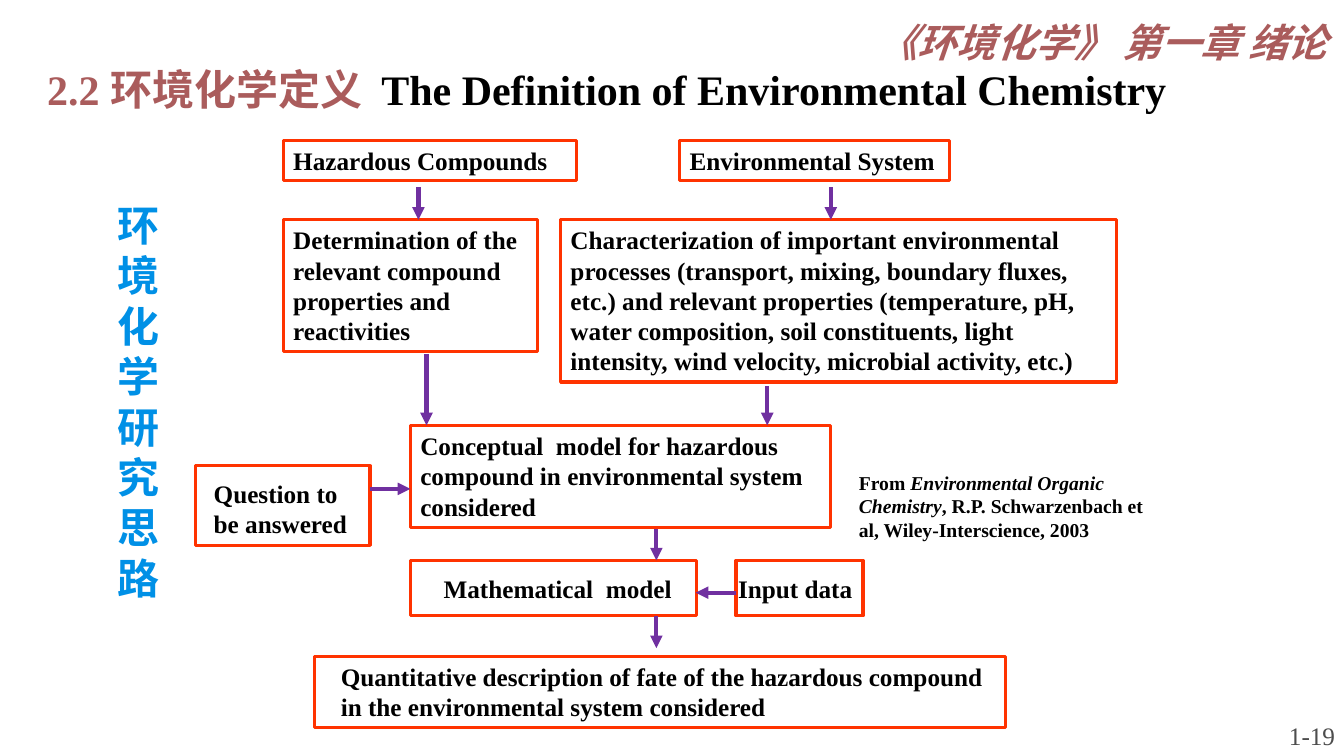
from dataclasses import dataclass

from lxml.etree import SubElement
from pptx import Presentation
from pptx.dml.color import RGBColor as Rgb
from pptx.enum.shapes import MSO_CONNECTOR as Link, MSO_SHAPE as Form
from pptx.enum.text import MSO_ANCHOR as Anchor, PP_ALIGN as Align
from pptx.oxml.ns import qn
from pptx.util import Inches, Pt

CELL = 0.1
SERIF, HAN, KANJI = "Times New Roman", "Noto Sans CJK SC", "Noto Sans CJK JP"
INK, RED, PURPLE, ROSE, BLUE, GRAY = (
    "000000", "FF3300", "7030A0", "AA5C5C", "0090E6", "4D4D4D")


@dataclass
class Run:
    text: str
    color: str = INK
    italic: bool = False


@dataclass
class Label:
    col: float
    row: float
    cols: float
    rows: float
    runs: list[Run]
    size: int = 18
    face: str = SERIF
    han: str = HAN
    bold: bool = True
    align: Align = Align.LEFT
    anchor: Anchor = Anchor.TOP
    lines: float = 1.0
    hang: float = 0
    left: float = 1
    top: float = 0.5
    frame: bool = False


@dataclass
class Arrow:
    col: float
    row: float
    to_col: float
    to_row: float


def node(col: float, row: float, cols: float, rows: float, text: str,
         left: float = 1, top: float = 0.5) -> Label:
    """Describe a framed step of the flow chart."""
    return Label(col, row, cols, rows, [Run(text)], left=left, top=top, frame=True)


NODES = [
    node(28.1, 13.9, 29.1, 4, "Hazardous Compounds"),
    node(67.4, 13.9, 26.8, 4, "Environmental System"),
    node(28.1, 21.8, 25.2, 13.1,
         "Determination of the relevant compound properties and reactivities"),
    node(55.6, 21.8, 55.1, 16.1,
         "Characterization of important environmental processes (transport, "
         "mixing, boundary fluxes, etc.) and relevant properties (temperature, "
         "pH, water composition, soil constituents, light intensity, wind "
         "velocity, microbial activity, etc.)"),
    node(40.7, 42.2, 41.7, 10.1,
         "Conceptual  model for hazardous compound in environmental system considered"),
    node(19.4, 46.2, 17.3, 7.9, "Question to be answered", 1.8, 1.2),
    node(40.7, 55.6, 28.4, 5.5, "Mathematical  model", 3.3, 1.3),
    node(73, 55.6, 12.6, 5.5, "Input data", 0.2, 1.3),
    node(31.2, 65.1, 68.5, 7.1,
         "Quantitative description of fate of the hazardous compound in the "
         "environmental system considered", 2.6),
]

ARROWS = [
    Arrow(41.5, 18.6, 41.5, 21.8),
    Arrow(82.4, 18.6, 82.4, 21.8),
    Arrow(42.3, 35.1, 42.3, 42.2),
    Arrow(76.1, 38.3, 76.1, 42.2),
    Arrow(36.7, 48.5, 40.7, 48.5),
    Arrow(65.1, 52.5, 65.1, 55.6),
    Arrow(73, 58.8, 69, 58.8),
    Arrow(65.1, 61.1, 65.1, 64.3),
]

NOTES = [
    Label(112.5, 69.8, 20.9, 5.2, [Run("1-19", GRAY)], bold=False,
          align=Align.RIGHT, anchor=Anchor.BOTTOM),
    Label(84.2, 46.2, 32.5, 8.1, [
        Run("From "), Run("Environmental Organic Chemistry", italic=True),
        Run(", R.P. Schwarzenbach et al, Wiley-Interscience, 2003")], 14),
    Label(10.7, 19.3, 7.9, 41.4, [Run("环境化学研究思路", BLUE)], 30, HAN),
    Label(75.1, 1.3, 57.5, 5.7, [Run("《环境化学》 第一章 绪论", ROSE, True)],
          28, KANJI, KANJI, align=Align.RIGHT),
    Label(3.7, 1.3, 122.1, 12.5, [
        Run("2.2 环境化学定义  ", ROSE),
        Run("The Definition of Environmental Chemistry")],
        30, anchor=Anchor.MIDDLE, lines=1.5, hang=5),
]


def grid(*cells: float) -> list[Inches]:
    """Turn counts of grid cells into lengths."""
    return [Inches(cell * CELL) for cell in cells]


def tint(code: str) -> Rgb:
    """Turn a hex string into a colour."""
    return Rgb.from_string(code)


def style(item: object, form: dict) -> None:
    """Set each format value on an object."""
    for name, value in form.items():
        setattr(item, name, value)


def write(label: Label, shapes) -> None:
    """Draw a label, framed or bare, with its runs."""
    place = grid(label.col, label.row, label.cols, label.rows)
    if label.frame:
        box = shapes.add_shape(Form.RECTANGLE, *place)
        box.shadow.inherit = False
        box.fill.background()
        box.line.color.rgb = tint(RED)
        box.line.width = Pt(2.25)
    else:
        box = shapes.add_textbox(*place)
    left, top, right, base = grid(label.left, label.top, min(label.left, 1), 0.5)
    style(box.text_frame, {
        "word_wrap": True, "vertical_anchor": label.anchor, "margin_left": left,
        "margin_top": top, "margin_right": right, "margin_bottom": base})
    para = box.text_frame.paragraphs[0]
    style(para, {"alignment": label.align, "line_spacing": label.lines})
    if label.hang:
        hang = grid(label.hang)[0]
        props = para._p.get_or_add_pPr()
        props.set("marL", str(hang))
        props.set("indent", str(-hang))
    for part in label.runs:
        run = para.add_run()
        run.text = part.text
        style(run.font, {"name": label.face, "size": Pt(label.size),
                         "bold": label.bold, "italic": part.italic})
        run.font.color.rgb = tint(part.color)
        SubElement(run._r.get_or_add_rPr(), qn("a:ea"), typeface=label.han)


def point(arrow: Arrow, shapes) -> None:
    """Draw an arrow between two grid points."""
    ends = grid(arrow.col, arrow.row, arrow.to_col, arrow.to_row)
    link = shapes.add_connector(Link.STRAIGHT, *ends)
    link.line.color.rgb = tint(PURPLE)
    link.line.width = Pt(3)
    SubElement(link.line._get_or_add_ln(), qn("a:tailEnd"), type="triangle")
    SubElement(link._element.spPr, qn("a:effectLst"))


def main() -> None:
    """Build the slide and save it."""
    deck = Presentation()
    style(deck, {"slide_width": Inches(13.33), "slide_height": Inches(7.5)})
    shapes = deck.slides.add_slide(deck.slide_layouts[6]).shapes
    for label in NODES:
        write(label, shapes)
    for arrow in ARROWS:
        point(arrow, shapes)
    for label in NOTES:
        write(label, shapes)
    deck.save("out.pptx")


if __name__ == "__main__":
    main()
